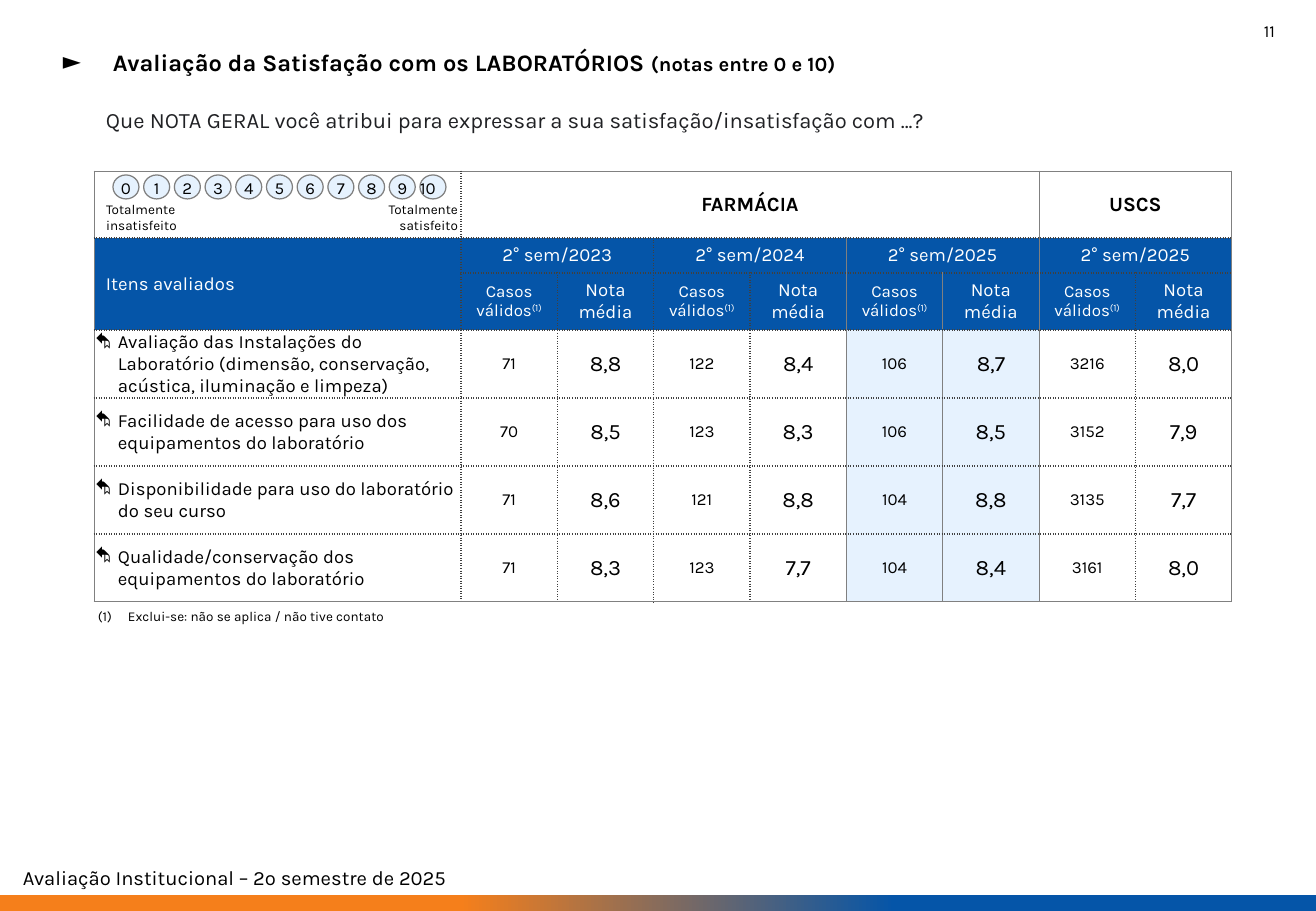
from lxml import etree
from pptx import Presentation
from pptx import util as u
from pptx.dml.color import RGBColor
from pptx.enum import shapes, text
from pptx.oxml import ns

EMU_PER_PX = 914400 / 121.5
WIDTH, HEIGHT = 1316, 911
FONT = "Karla"
BLACK, WHITE, INK = "000000", "FFFFFF", "202124"
BLUE, PALE_BLUE, ORANGE = "0555A8", "E6F2FE", "F57F1B"
GRAY, DARK_GRAY = "808080", "404040"
LEFT, CENTER, RIGHT = text.PP_ALIGN.LEFT, text.PP_ALIGN.CENTER, text.PP_ALIGN.RIGHT
MIDDLE = text.MSO_ANCHOR.MIDDLE

# Bullets: font attributes, element tag, element attributes
TRIANGLE = ({"typeface": FONT}, "a:buChar", {"char": "►"})
# The symbol font draws this letter as the arrow ⮲
ARROW = ({"typeface": "Wingdings", "pitchFamily": "2", "charset": "2"},
         "a:buChar", {"char": "Å"})
NOTE_NUMBER = ({"typeface": FONT}, "a:buAutoNum", {"type": "arabicParenBoth"})

# Table content
SEMESTERS = ["2° sem/2023", "2° sem/2024", "2° sem/2025", "2° sem/2025"]
ITEMS = [
    ("Avaliação das Instalações do Laboratório (dimensão, conservação, acústica, iluminação e limpeza)",
     "71 8,8 122 8,4 106 8,7 3216 8,0"),
    ("Facilidade de acesso para uso dos equipamentos do laboratório",
     "70 8,5 123 8,3 106 8,5 3152 7,9"),
    ("Disponibilidade para uso do laboratório do seu curso",
     "71 8,6 121 8,8 104 8,8 3135 7,7"),
    ("Qualidade/conservação dos equipamentos do laboratório",
     "71 8,3 123 7,7 104 8,4 3161 8,0"),
]
ROW_HEIGHTS = [67, 35, 57] + [68] * len(ITEMS)
ITEM_WIDTH = 367
# First row, first column, last row, last column
MERGES = [(0, 1, 0, 6), (0, 7, 0, 8), (1, 0, 2, 0)] + [(1, c, 1, c + 1) for c in (1, 3, 5, 7)]
SOLID_COLUMN_EDGES = {0, 5, 6, 7, 9}
SOLID_ROW_EDGES = {0, len(ROW_HEIGHTS)}


def px(length):
    return u.Emu(round(length * EMU_PER_PX))


def color(value):
    return RGBColor.from_string(value)


def apply(target, values):
    for name, value in values.items():
        setattr(target, name, value)


def margins(left, top, right, bottom):
    return {"margin_left": px(left), "margin_top": px(top),
            "margin_right": px(right), "margin_bottom": px(bottom)}


def add_bullet(paragraph, kind, left, hang):
    font, tag, values = kind
    properties = paragraph._p.get_or_add_pPr()
    properties.set("marL", str(px(left)))
    properties.set("indent", str(-px(hang)))
    bullet_color = etree.SubElement(properties, ns.qn("a:buClr"))
    etree.SubElement(bullet_color, ns.qn("a:srgbClr"), val=BLACK)
    etree.SubElement(properties, ns.qn("a:buFont"), font)
    etree.SubElement(properties, ns.qn(tag), values)


def write(frame, paragraphs, size, ink=BLACK, align=LEFT, bullet=None, bold=False):
    """Each paragraph is a list of (text, font values) runs."""
    for index, runs in enumerate(paragraphs):
        paragraph = frame.add_paragraph() if index else frame.paragraphs[0]
        paragraph.alignment = align
        if bullet:
            add_bullet(paragraph, *bullet)
        for words, values in runs:
            run = paragraph.add_run()
            run.text = words
            run.font.color.rgb = color(ink)
            apply(run.font, {"name": FONT, "size": u.Pt(size), "bold": bold, **values})


def add_text(slide, box, lines, size, **style):
    frame = slide.shapes.add_textbox(*map(px, box)).text_frame
    apply(frame, {"word_wrap": True, **margins(12, 6, 12, 6)})
    write(frame, [[(line, {})] for line in lines], size, **style)


def add_heading(slide, box):
    title = slide.shapes.title
    apply(title, dict(zip(("left", "top", "width", "height"), map(px, box))))
    apply(title.text_frame, {"word_wrap": True, "auto_size": text.MSO_AUTO_SIZE.NONE,
                             "vertical_anchor": MIDDLE, **margins(12, 6, 12, 6)})
    write(title.text_frame, [[("Avaliação da Satisfação com os LABORATÓRIOS ", {}),
                              ("(notas entre 0 e 10)", {"size": u.Pt(12)})]],
          14, bold=True, bullet=(TRIANGLE, 94, 50))


def add_scale(slide, box):
    """Circles from 0 to 10 with a caption at each end."""
    left, top, width, height = box
    diameter, circle_height = 26, 24
    step = (width - 34 - diameter) / 10
    for grade in range(11):
        circle = slide.shapes.add_shape(
            shapes.MSO_SHAPE.OVAL, px(left + 19 + grade * step), px(top + 4),
            px(diameter), px(circle_height))
        circle.shadow.inherit = False
        circle.fill.solid()
        circle.fill.fore_color.rgb = color(PALE_BLUE)
        circle.line.color.rgb = color(GRAY)
        circle.line.width = u.Pt(0.75)
        apply(circle.text_frame, {"word_wrap": False, "vertical_anchor": MIDDLE,
                                  **margins(0, 1, 10 if grade == 10 else 0, 0)})
        write(circle.text_frame, [[(str(grade), {})]], 10, align=CENTER)
    caption_width = 107
    for x, word, align in ((left, "insatisfeito", LEFT),
                           (left + width + 9 - caption_width, "satisfeito", RIGHT)):
        add_text(slide, (x, top + 24, caption_width, height - 22),
                 ["Totalmente", word], 8, align=align)


def add_borders(cell, row, column):
    """Outline the merged region from its first cell and along its outer sides."""
    top, left, bottom, right = next(
        (m for m in MERGES if m[0] <= row <= m[2] and m[1] <= column <= m[3]),
        (row, column, row, column))
    is_first = (row, column) == (top, left)
    sides = [("a:lnL", column == left, left in SOLID_COLUMN_EDGES),
             ("a:lnR", column == right, right + 1 in SOLID_COLUMN_EDGES),
             ("a:lnT", row == top, top in SOLID_ROW_EDGES),
             ("a:lnB", row == bottom, bottom + 1 in SOLID_ROW_EDGES)]
    properties = cell._tc.get_or_add_tcPr()
    drawn_sides = [(tag, solid) for tag, outer, solid in sides if outer or is_first]
    for position, (tag, solid) in enumerate(drawn_sides):
        line = etree.Element(ns.qn(tag), w=str(u.Pt(0.5 if solid else 1)))
        fill = etree.SubElement(line, ns.qn("a:solidFill"))
        etree.SubElement(fill, ns.qn("a:srgbClr"), val=GRAY if solid else DARK_GRAY)
        etree.SubElement(line, ns.qn("a:prstDash"), val="solid" if solid else "sysDot")
        properties.insert(position, line)


def cell_content(row, column):
    """Runs and style of one cell, or None for an empty or merged one."""
    if row == 0:
        words = {1: "FARMÁCIA", 7: "USCS"}.get(column)
        return words and ([(words, {})], {"size": 12, "bold": True})
    if row < 3:
        style = {"size": 11, "ink": WHITE}
        if column == 0:
            return ([("Itens avaliados", {})], {**style, "align": LEFT}) if row == 1 else None
        is_count = column % 2 == 1
        if row == 1:
            return ([(SEMESTERS[column // 2], {})], style) if is_count else None
        if is_count:
            return [("Casos válidos", {}), ("(1)", {})], {**style, "size": 10}
        return [("Nota média", {})], style
    item, values = ITEMS[row - 3]
    if column == 0:
        return [(item, {})], {"size": 11, "align": LEFT, "bullet": (ARROW, 23, 23)}
    return [(values.split()[column - 1], {})], {"size": 10 if column % 2 else 13}


def add_grades_table(slide, box):
    table = slide.shapes.add_table(len(ROW_HEIGHTS), 9, *map(px, box)).table
    apply(table, {"first_row": False, "horz_banding": False})
    for row, height in zip(table.rows, ROW_HEIGHTS):
        row.height = px(height)
    for index, column in enumerate(table.columns):
        column.width = px((box[2] - ITEM_WIDTH) / 8 if index else ITEM_WIDTH)
    for top, left, bottom, right in MERGES:
        table.cell(top, left).merge(table.cell(bottom, right))
    for row in range(len(ROW_HEIGHTS)):
        for column in range(9):
            cell = table.cell(row, column)
            cell.vertical_anchor = MIDDLE
            inset = (1, 1, 1, 0) if row > 2 else (5 if column else 12, 6, 5, 6)
            apply(cell, margins(*inset))
            if row in (1, 2) or (row > 2 and column in (5, 6)):
                cell.fill.solid()
                cell.fill.fore_color.rgb = color(BLUE if row < 3 else PALE_BLUE)
            else:
                cell.fill.background()
            add_borders(cell, row, column)
            content = cell_content(row, column)
            if content:
                runs, style = content
                write(cell.text_frame, [runs], **{"align": CENTER, **style})
                if len(runs) == 2:
                    note_mark = cell.text_frame.paragraphs[0].runs[1]
                    note_mark._r.get_or_add_rPr().set("baseline", "30000")


def add_footer(slide, box):
    left, top, width, height = box
    bar_height = 16
    bar = slide.shapes.add_shape(shapes.MSO_SHAPE.RECTANGLE, px(left),
                                 px(top + height - bar_height), px(width), px(bar_height))
    bar.shadow.inherit = False
    bar.line.fill.background()
    bar.fill.gradient()
    bar.fill.gradient_angle = 0
    for stop, position, value in zip(bar.fill.gradient_stops, (0.35, 0.68), (ORANGE, BLUE)):
        stop.position = position
        stop.color.rgb = color(value)
    add_text(slide, (left + 11, top, width - 22, height - bar_height),
             ["Avaliação Institucional – 2º semestre de 2025"], 12)


def main():
    presentation = Presentation()
    apply(presentation, {"slide_width": px(WIDTH), "slide_height": px(HEIGHT)})
    slide = presentation.slides.add_slide(presentation.slide_layouts[5])
    add_footer(slide, (0, 859, WIDTH, 52))
    add_heading(slide, (7, 31, 1001, 62))
    add_text(slide, (1009, 15, 278, 48), ["11"], 10, align=RIGHT)
    add_text(slide, (94, 101, 1138, 39),
             ["Que NOTA GERAL você atribui para expressar a sua satisfação/insatisfação com ...?"],
             13, ink=INK, align=text.PP_ALIGN.JUSTIFY)
    add_grades_table(slide, (94, 171, 1138, sum(ROW_HEIGHTS)))
    add_scale(slide, (94, 171, ITEM_WIDTH, ROW_HEIGHTS[0]))
    add_text(slide, (86, 602, 318, 29), ["Exclui-se: não se aplica / não tive contato"],
             8, bullet=(NOTE_NUMBER, 30, 30))
    presentation.save("out.pptx")


if __name__ == "__main__":
    main()
